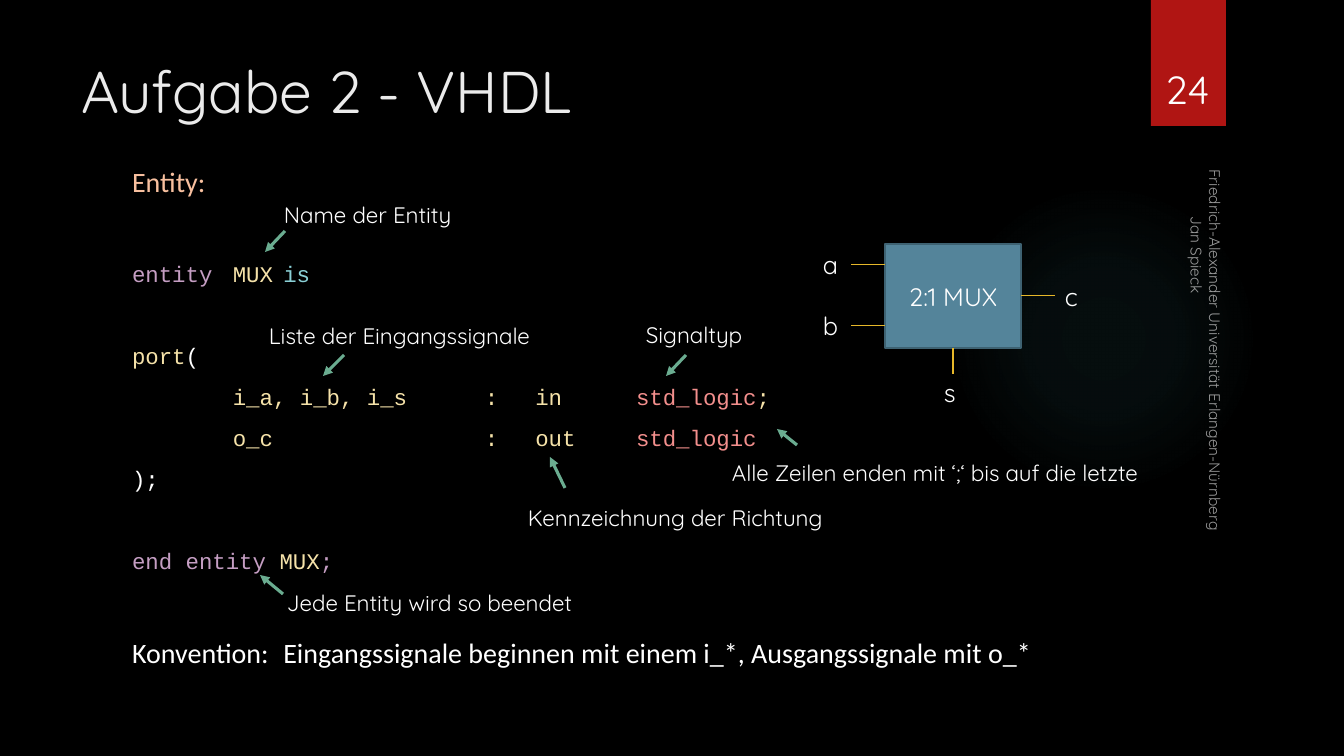
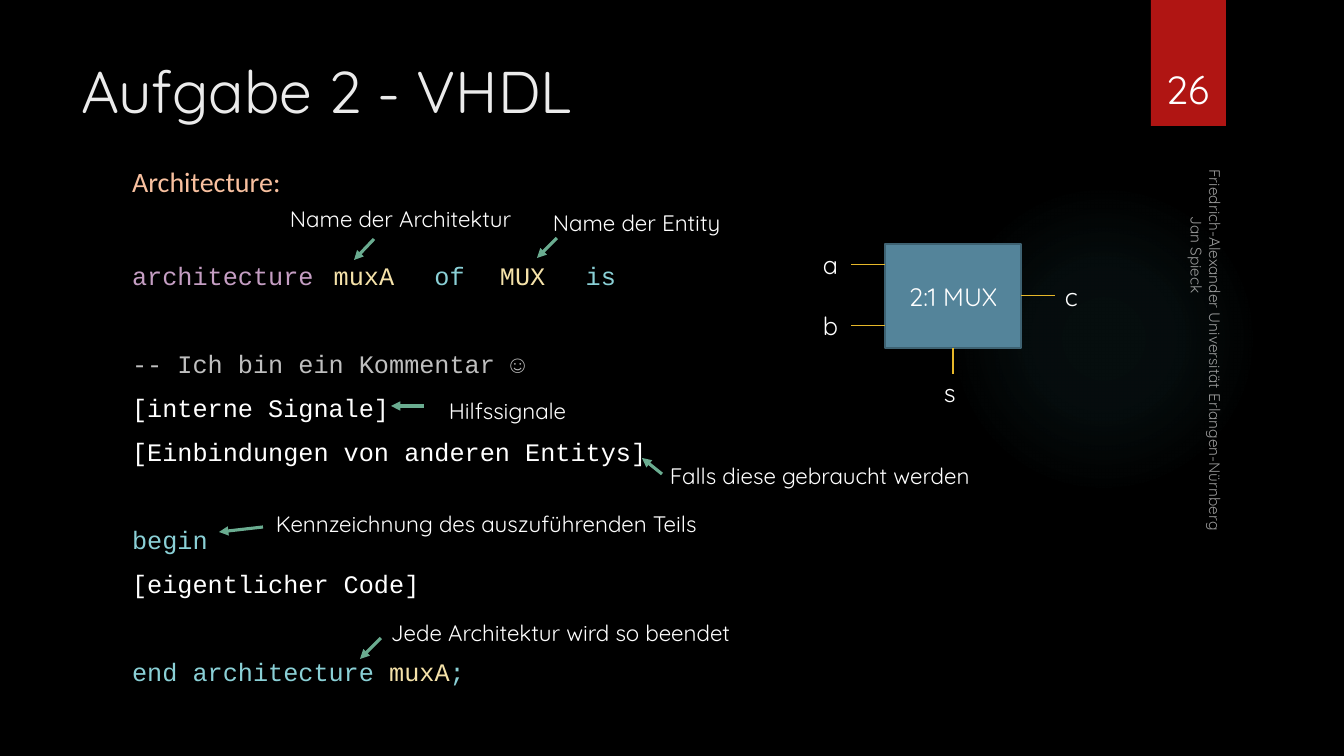
import lxml.etree
import pptx
import pptx.dml.color
import pptx.enum.shapes
import pptx.enum.text
import pptx.oxml
import pptx.oxml.ns
import pptx.util

PX = 9144000 / 1008
COLORS = {
    "background": "000000", "title": "EBEBEB", "white": "FFFFFF", "banner": "B01513",
    "glow": "50B9C1", "block": "54849A", "block_edge": "3E6272", "wire": "E6B729",
    "arrow": "6AAC90", "heading": "F8C09F", "keyword": "C59EC3", "name": "F5E2A9",
    "word": "8AD0D6", "type": "F38F8D", "comment": "BFBFBF",
}
HEADING_FONT, CODE_FONT, LABEL_FONT = "Calibri", "Courier New", "Quicksand"
# Space before a line, in points
LINE_GAP = 10
HEADING_GAP = 44.6
ENTITY_GAP, ARCHITECTURE_GAP = 39.6, 41.2
CONVENTION_GAP = 44

ANCHOR = pptx.enum.text.MSO_ANCHOR
ALIGN = pptx.enum.text.PP_ALIGN
AUTO_SIZE = pptx.enum.text.MSO_AUTO_SIZE
SHAPE = pptx.enum.shapes.MSO_SHAPE
TOP, LEFT, BOTTOM, RIGHT = range(4)


def emu(pixels):
    return pptx.util.Emu(round(pixels * PX))


def rgb(name):
    return pptx.dml.color.RGBColor.from_string(COLORS[name])


def add_child(parent, tag, **attributes):
    return lxml.etree.SubElement(parent, pptx.oxml.ns.qn(tag), **attributes)


def add_span(para, text, size=16, color="white", font=LABEL_FONT, alpha=None):
    span = para.add_run()
    span.text = text
    span.font.size = pptx.util.Pt(size)
    span.font.name = font
    span.font.color.rgb = rgb(color)
    if alpha is not None:
        fill = span.font.fill._xPr.find(pptx.oxml.ns.qn("a:solidFill"))
        add_child(fill[0], "a:alpha", val=str(alpha * 1000))
    return span


class Slides:
    """Holds the deck, its style and the page being built."""

    def __init__(self):
        self.deck = pptx.Presentation()
        self.deck.slide_width, self.deck.slide_height = emu(1344), emu(756)
        background = self.deck.slide_master.background.fill
        background.solid()
        background.fore_color.rgb = rgb("background")
        self.page = None

    def new_page(self, title, number):
        self.page = self.deck.slides.add_slide(self.deck.slide_layouts[1])
        self.glow(949, 184, 310)
        self.shape(SHAPE.RECTANGLE, 1151, 0, 75, 126, "banner")
        frame = self.placeholder(self.page.shapes.title, 71, 50, 1037, 154)
        frame.paragraphs[0].alignment = ALIGN.LEFT
        add_span(frame.paragraphs[0], title, size=42, color="title")
        self.footer("Friedrich-Alexander Universität Erlangen-Nürnberg", "Jan Spieck")
        box = self.text_box(1141, 32, 93, 85)
        box.text_frame.word_wrap = True
        box.text_frame.vertical_anchor = ANCHOR.BOTTOM
        para = box.text_frame.paragraphs[0]
        para.alignment = ALIGN.CENTER
        add_span(para, number, size=28)

    def placeholder(self, holder, left, top, width, height):
        holder.left, holder.top = emu(left), emu(top)
        holder.width, holder.height = emu(width), emu(height)
        frame = holder.text_frame
        frame.auto_size = AUTO_SIZE.NONE
        frame.vertical_anchor = ANCHOR.TOP
        return frame

    def shape(self, kind, left, top, width, height, color, edge=None):
        shape = self.page.shapes.add_shape(kind, emu(left), emu(top), emu(width), emu(height))
        shape.shadow.inherit = False
        shape.fill.solid()
        shape.fill.fore_color.rgb = rgb(color)
        if edge:
            shape.line.color.rgb = rgb(edge)
            shape.line.width = pptx.util.Pt(1.5)
        else:
            shape.line.fill.background()
        return shape

    def glow(self, left, top, size):
        """Add a faint circle that fades out towards its edge."""
        circle = self.shape(SHAPE.OVAL, left, top, size, size, "glow")
        stops = "".join(
            f'<a:gs pos="{place}000"><a:srgbClr val="{COLORS["glow"]}">'
            f'<a:alpha val="{alpha}000"/></a:srgbClr></a:gs>'
            for place, alpha in ((0, 7), (36, 6), (69, 0)))
        gradient = pptx.oxml.parse_xml(
            f'<a:gradFill {pptx.oxml.ns.nsdecls("a")}><a:gsLst>{stops}</a:gsLst>'
            '<a:path path="circle"><a:fillToRect l="50000" t="50000" r="50000" b="50000"/>'
            '</a:path></a:gradFill>')
        properties = circle._element.spPr
        properties.replace(properties.find(pptx.oxml.ns.qn("a:solidFill")), gradient)

    def text_box(self, left, top, width, height):
        return self.page.shapes.add_textbox(emu(left), emu(top), emu(width), emu(height))

    def footer(self, university, author):
        box = self.text_box(995, 347, 425, 50)
        box.rotation = 90
        frame = box.text_frame
        frame.word_wrap = True
        frame.vertical_anchor = ANCHOR.BOTTOM
        add_span(frame.paragraphs[0], university, size=11, alpha=60)
        para = frame.add_paragraph()
        para._p.get_or_add_pPr().set("marL", str(emu(47)))
        add_span(para, author, size=11, alpha=60)

    def label(self, text, left, top, width, height=37, size=16):
        frame = self.text_box(left, top, width, height).text_frame
        frame.word_wrap = False
        frame.auto_size = AUTO_SIZE.SHAPE_TO_FIT_TEXT
        add_span(frame.paragraphs[0], text, size=size)

    def line(self, start, end, color="wire", weight=0.75, arrow=False):
        line = self.page.shapes.add_connector(
            pptx.enum.shapes.MSO_CONNECTOR.STRAIGHT, *map(emu, start + end))
        line.line.color.rgb = rgb(color)
        line.line.width = pptx.util.Pt(weight)
        if arrow:
            add_child(line.line._get_or_add_ln(), "a:tailEnd", type="triangle")
        add_child(line._element.spPr, "a:effectLst")
        return line

    def callout(self, text, corner, width, start, end):
        self.label(text, *corner, width)
        self.line(start, end, color="arrow", weight=2.25, arrow=True)

    def body(self, lines, code_size):
        """Fill the body with (gap before, spans) lines of code or prose."""
        frame = self.placeholder(self.page.placeholders[1], 122, 159, 986, 572)
        for index, (gap, spans) in enumerate(lines):
            para = frame.add_paragraph() if index else frame.paragraphs[0]
            properties = para._p.get_or_add_pPr()
            properties.set("marL", "0")
            properties.set("indent", "0")
            properties.set("defTabSz", str(pptx.util.Inches(0.5)))
            add_child(properties, "a:buNone")
            para.space_before = pptx.util.Pt(gap)
            para.line_spacing = 1.0
            for text, color, *prose in spans:
                size, font = (20, HEADING_FONT) if prose else (code_size, CODE_FONT)
                add_span(para, text, size=size, color=color, font=font)

    def multiplexer(self):
        block = self.shape(SHAPE.RECTANGLE, 885, 244, 136, 104, "block", edge="block_edge")
        block.text_frame.vertical_anchor = ANCHOR.MIDDLE
        para = block.text_frame.paragraphs[0]
        para.alignment = ALIGN.CENTER
        add_span(para, "2:1 MUX", size=18)
        for height in (265, 326):
            self.line((885, height), (851, height))
        self.line((953, 348), (953, 374)).begin_connect(block, BOTTOM)
        self.line((1021, 296), (1055, 296)).begin_connect(block, RIGHT)
        for pin, left, top, width in (("a", 813, 244, 37), ("b", 813, 305, 37),
                                      ("s", 934, 372, 30), ("c", 1055, 276, 36)):
            self.label(pin, left, top, width, height=40, size=18)


ENTITY_LINES = [
    (0, [("Entity:", "heading", "prose")]),
    (HEADING_GAP, [("entity \t", "keyword"), ("MUX\t", "name"), ("is", "word")]),
    (ENTITY_GAP, [("port", "name"), ("(", "white")]),
    (LINE_GAP, [("\t\ti_a, i_b, i_s\t\t:\tin\t\t", "name"), ("std_logic", "type"),
                (";", "name")]),
    (LINE_GAP, [("\t\to_c\t\t\t\t\t:\tout\t\t", "name"), ("std_logic", "type")]),
    (LINE_GAP, [(");", "white")]),
    (ENTITY_GAP, [("end entity ", "keyword"), ("MUX", "name"), (";", "keyword")]),
    (CONVENTION_GAP, [("Konvention:\tEingangssignale beginnen mit einem i_*, "
                       "Ausgangssignale mit o_*", "white", "prose")]),
]
ENTITY_CALLOUTS = [
    ("Name der Entity", (274, 196), 196, (285, 231), (265, 252)),
    ("Liste der Eingangssignale", (259, 317), 292, (344, 355), (323, 376)),
    ("Signaltyp", (636, 316), 120, (686, 355), (666, 376)),
    ("Jede Entity wird so beendet", (277, 584), 325, (283, 594), (260, 575)),
    ("Kennzeichnung der Richtung", (518, 499), 337, (565, 488), (550, 457)),
    ("Alle Zeilen enden mit ‘;‘ bis auf die letzte", (722, 454), 465, (797, 445), (777, 429)),
]
ARCHITECTURE_LINES = [
    (0, [("Architecture:", "heading", "prose")]),
    (HEADING_GAP, [("architecture \t", "keyword"), ("muxA\t", "name"), ("of\t", "word"),
                   (" MUX \t", "name"), ("is", "word")]),
    (ARCHITECTURE_GAP, [("-- Ich bin ein Kommentar ☺", "comment")]),
    (LINE_GAP, [("[interne Signale]", "white")]),
    (LINE_GAP, [("[Einbindungen von anderen Entitys]", "white")]),
    (ARCHITECTURE_GAP, [("begin", "word")]),
    (LINE_GAP, [("[eigentlicher Code]", "white")]),
    (ARCHITECTURE_GAP, [("end architecture ", "word"), ("muxA", "name"), (";", "word")]),
]
ARCHITECTURE_CALLOUTS = [
    ("Name der Architektur", (280, 200), 256, (374, 239), (354, 260)),
    ("Name der Entity", (543, 204), 196, (557, 238), (537, 258)),
    ("Hilfssignale", (439, 392), 138, (424, 406), (391, 406)),
    ("Falls diese gebraucht werden", (660, 457), 343, (662, 474), (642, 458)),
    ("Kennzeichnung des auszuführenden Teils", (266, 505), 465, (263, 527), (219, 532)),
    ("Jede Architektur wird so beendet", (381, 614), 385, (381, 638), (360, 659)),
]


def main():
    slides = Slides()
    for number, lines, code_size, callouts in (
            ("24", ENTITY_LINES, 16, ENTITY_CALLOUTS),
            ("26", ARCHITECTURE_LINES, 18, ARCHITECTURE_CALLOUTS)):
        slides.new_page("Aufgabe 2 - VHDL", number)
        slides.body(lines, code_size)
        slides.multiplexer()
        for callout in callouts:
            slides.callout(*callout)
    slides.deck.save("out.pptx")


if __name__ == "__main__":
    main()
